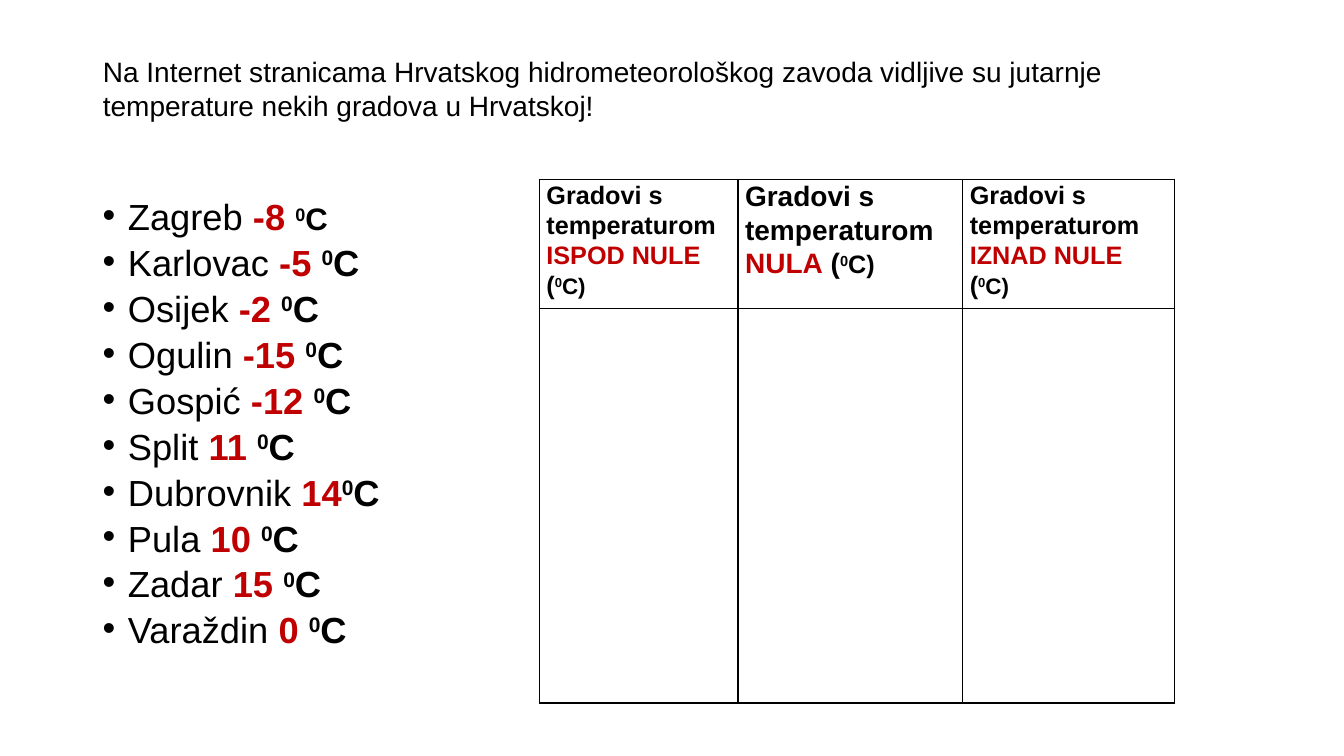
from dataclasses import dataclass

from lxml.etree import SubElement
from pptx import Presentation
from pptx.dml.color import RGBColor
from pptx.enum.text import MSO_ANCHOR, MSO_AUTO_SIZE, PP_ALIGN
from pptx.oxml.ns import qn
from pptx.util import Inches, Pt


@dataclass(frozen=True)
class Theme:
    font: str = "Arial"
    black: RGBColor = RGBColor(0, 0, 0)
    red: RGBColor = RGBColor(0xC0, 0, 0)
    intro: float = 20
    city: float = 25.9
    small_unit: float = 22.2
    border: float = 1


THEME = Theme()

INTRO = ("Na Internet stranicama Hrvatskog hidrometeorološkog zavoda vidljive su "
         "jutarnje temperature nekih gradova u Hrvatskoj!")

# City, temperature with its gap, size of the unit
CITIES = [
    ("Zagreb", "-8 ", THEME.small_unit),
    ("Karlovac", "-5 ", THEME.city),
    ("Osijek", "-2 ", THEME.city),
    ("Ogulin", "-15 ", THEME.city),
    ("Gospić", "-12 ", THEME.city),
    ("Split", "11 ", THEME.city),
    ("Dubrovnik", "14", THEME.city),
    ("Pula", "10 ", THEME.city),
    ("Zadar", "15 ", THEME.city),
    ("Varaždin", "0 ", THEME.city),
]

# Group, opening bracket, text size, unit size, column width
GROUPS = [
    ("ISPOD NULE ", "(", 18, 16, 1.97),
    ("NULA", " (", 20, 18, 2.23),
    ("IZNAD NULE ", "(", 18, 16, 2.1),
]
ROW_HEIGHTS = (1.28, 3.91)


def add_run(p, text, size, color=THEME.black, bold=False, raised=False):
    r = p.add_run()
    r.text = text
    r.font.name = THEME.font
    r.font.size = Pt(size)
    r.font.bold = bold
    r.font.color.rgb = color
    if raised:
        r.font._element.set("baseline", "30000")


def add_unit(p, text, size):
    add_run(p, "0", size, bold=True, raised=True)
    add_run(p, text, size, bold=True)


def set_bullet(p):
    pPr = p._p.get_or_add_pPr()
    pPr.set("marL", str(Inches(0.25)))
    pPr.set("indent", str(Inches(-0.25)))
    SubElement(pPr, qn("a:buFont"), typeface=THEME.font)
    SubElement(pPr, qn("a:buChar"), char="•")


def set_borders(cell):
    tcPr = cell._tc.get_or_add_tcPr()
    for i, side in enumerate(("lnL", "lnR", "lnT", "lnB")):
        ln = SubElement(tcPr, qn(f"a:{side}"), w=str(Pt(THEME.border)))
        fill = SubElement(ln, qn("a:solidFill"))
        SubElement(fill, qn("a:srgbClr"), val=str(THEME.black))
        tcPr.insert(i, ln)  # borders come before the fill


def add_intro(s):
    sp = s.shapes.title
    sp.left, sp.top = Inches(0.92), Inches(0.49)
    sp.width, sp.height = Inches(11.5), Inches(0.77)
    tf = sp.text_frame
    tf.vertical_anchor = MSO_ANCHOR.TOP
    tf.auto_size = MSO_AUTO_SIZE.NONE
    p = tf.paragraphs[0]
    p.alignment = PP_ALIGN.LEFT
    add_run(p, INTRO, THEME.intro)


def add_city_list(s):
    sp = s.shapes.add_textbox(Inches(0.92), Inches(2), Inches(3.15), Inches(4.76))
    tf = sp.text_frame
    tf.word_wrap = True
    for i, (city, degrees, unit_size) in enumerate(CITIES):
        p = tf.add_paragraph() if i else tf.paragraphs[0]
        p.line_spacing = 0.7
        p.space_before = Pt(11)
        set_bullet(p)
        add_run(p, f"{city} ", THEME.city)
        add_run(p, degrees, THEME.city, THEME.red, bold=True)
        add_unit(p, "C", unit_size)


def add_group_table(s):
    width = sum(group[-1] for group in GROUPS)
    table = s.shapes.add_table(
        len(ROW_HEIGHTS), len(GROUPS), Inches(5.35), Inches(1.78),
        Inches(width), Inches(sum(ROW_HEIGHTS))).table
    table.first_row = table.horz_banding = False
    for row, height in zip(table.rows, ROW_HEIGHTS):
        row.height = Inches(height)
    for cell in table.iter_cells():
        cell.margin_left = cell.margin_right = Inches(0.07)
        cell.margin_top = cell.margin_bottom = 0
        cell.fill.background()
        set_borders(cell)

    # Header row
    for i, (group, bracket, size, unit_size, col_width) in enumerate(GROUPS):
        table.columns[i].width = Inches(col_width)
        p = table.cell(0, i).text_frame.paragraphs[0]
        p.line_spacing = 1.07
        p.space_after = Pt(8)
        add_run(p, "Gradovi s temperaturom ", size, bold=True)
        add_run(p, group, size, THEME.red, bold=True)
        add_run(p, bracket, size, bold=True)
        add_unit(p, "C)", unit_size)


def main():
    prs = Presentation()
    prs.slide_width, prs.slide_height = Inches(13.33), Inches(7.5)
    s = prs.slides.add_slide(prs.slide_layouts[5])
    add_intro(s)
    add_city_list(s)
    add_group_table(s)
    prs.save("out.pptx")


if __name__ == "__main__":
    main()
